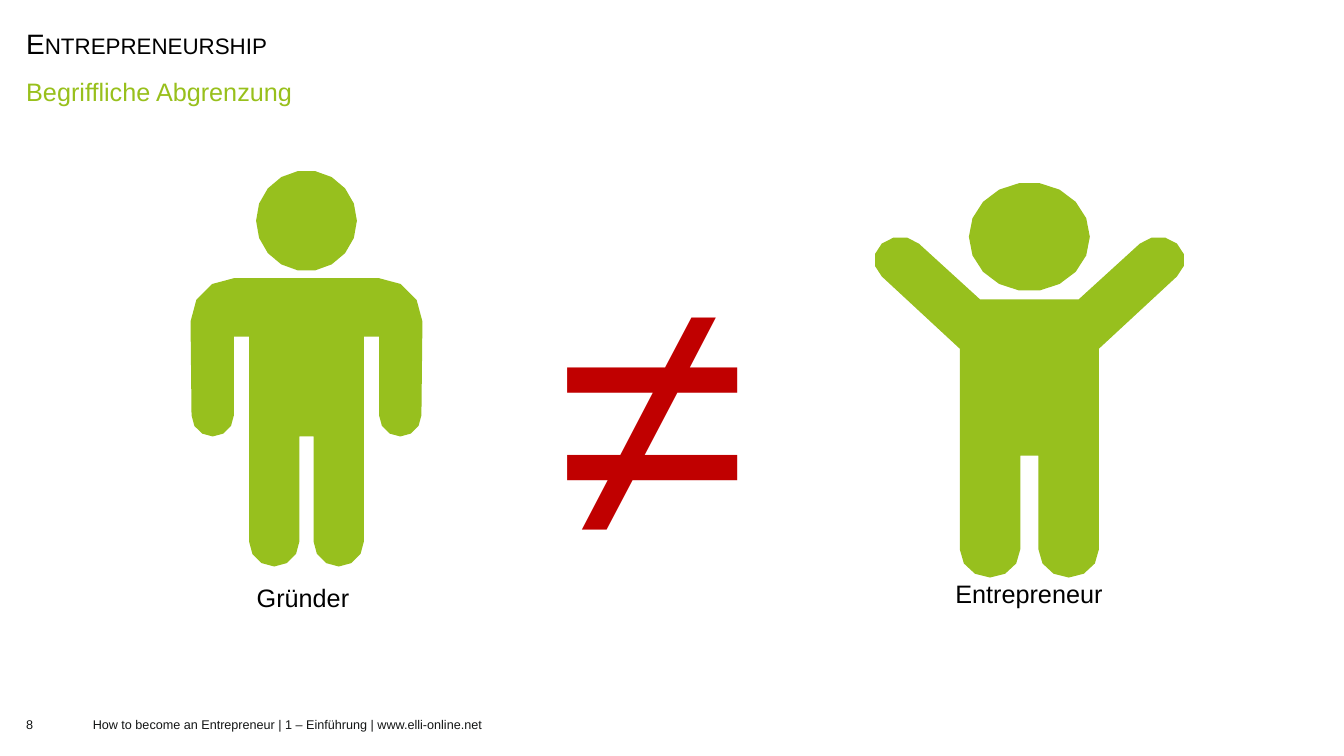
import math

from pptx import Presentation
from pptx import util as u
from pptx.dml.color import RGBColor
from pptx.enum import text
from pptx.oxml.ns import qn

COLORS = {"black": "000000", "footer": "141616", "heading": "98C01C",
          "figure": "97C01E", "unequal": "C00000"}

prs = Presentation()
prs.slide_width, prs.slide_height = u.Inches(13.33), u.Inches(7.5)
s = prs.slides.add_slide(prs.slide_layouts[1])


def put_text(words, box, size=18, color="black", align=text.PP_ALIGN.LEFT,
             anchor=text.MSO_ANCHOR.TOP, inset=None, spacing=None,
             small_caps=False, holder=None):
    """Write one line into a placeholder or a new text box."""
    box = [u.Inches(v) for v in box]
    sp = holder or s.shapes.add_textbox(*box)
    sp.left, sp.top, sp.width, sp.height = box
    tf = sp.text_frame
    tf.word_wrap = True
    tf.auto_size = text.MSO_AUTO_SIZE.NONE
    tf.vertical_anchor = anchor
    if inset is not None:
        tf.margin_left = tf.margin_right = u.Inches(inset)
        tf.margin_top = tf.margin_bottom = u.Inches(inset)
    p = tf.paragraphs[0]
    p.alignment = align
    p.space_before = u.Pt(0)
    if spacing:
        p.line_spacing = spacing
    if holder:
        pPr = p._p.get_or_add_pPr()
        pPr.set("marL", "0")
        pPr.set("indent", "0")
        pPr.append(pPr.makeelement(qn("a:buNone"), {}))
    r = p.add_run()
    r.text = words
    r.font.name, r.font.size = "Arial", u.Pt(size)
    r.font.color.rgb = RGBColor.from_string(COLORS[color])
    if small_caps:
        r.font._element.set("cap", "small")


def trace(parts, step):
    """Turn points (x, y) and arcs (cx, cy, rx, ry, from, to) into points."""
    points = []
    for x, y, *arc in parts:
        if not arc:
            points.append((x, y))
            continue
        rx, ry, start, end = arc
        for degrees in range(start, end + 1, step):
            a = math.radians(degrees)
            points.append((x + rx * math.cos(a), y + ry * math.sin(a)))
    return points


# Title and subtitle
put_text("Entrepreneurship", (0.16, 0.22, 9.37, 0.39), size=20, spacing=1.1,
         anchor=text.MSO_ANCHOR.MIDDLE, small_caps=True, holder=s.shapes.title)
put_text("Begriffliche Abgrenzung", (0.16, 0.68, 13.02, 0.39), color="heading",
         spacing=1.1, holder=s.placeholders[1])

# Figures: axis, head, and right half of the body measured from the axis
figures = [
    (3.04, (0, 2.19, 0.5, 0.5, 0, 340), [
        (0.72, 3.19, 0.43, 0.43, -90, 0),       # shoulder
        (0.93, 4.12, 0.21, 0.21, 0, 180),       # hand
        (0.72, 3.34), (0.57, 3.34),
        (0.32, 5.37, 0.25, 0.25, 0, 180),       # foot
        (0.07, 4.33)]),
    (10.21, (0, 2.35, 0.6, 0.54, 0, 340), [
        (0.49, 2.97),
        (1.28, 2.58, 0.26, 0.23, -135, 45),     # raised hand
        (0.69, 3.46),
        (0.39, 5.45, 0.3, 0.28, 0, 180),        # foot
        (0.09, 4.52)]),
]
for axis, head, half in figures:
    right = trace(half, step=30)
    body = right + [(-x, y) for x, y in reversed(right)]
    outlines = [[(u.Inches(axis + x), u.Inches(y)) for x, y in points]
                for points in (body, trace([head], step=20))]
    builder = s.shapes.build_freeform(*outlines[0][0])
    builder.add_line_segments(outlines[0][1:])
    builder.move_to(*outlines[1][0])
    builder.add_line_segments(outlines[1][1:])
    sp = builder.convert_to_shape()
    sp.shadow.inherit = False
    sp.fill.solid()
    sp.fill.fore_color.rgb = RGBColor.from_string(COLORS["figure"])
    sp.line.fill.background()

# Captions and the unequal sign
for words, box, size, color in [
        ("Gründer", (2.22, 5.73, 1.57, 0.4), 18, "black"),
        ("Entrepreneur", (9.3, 5.69, 1.81, 0.4), 18, "black"),
        ("≠", (5.41, 1.83, 2.13, 4.31), 250, "unequal")]:
    put_text(words, box, size, color, align=text.PP_ALIGN.CENTER)

# Footer
for words, box in [
        ("8", (0.26, 7, 0.5, 0.37)),
        ("How to become an Entrepreneur | 1 – Einführung | www.elli-online.net",
         (0.92, 7, 5.35, 0.37))]:
    put_text(words, box, 9, "footer", anchor=text.MSO_ANCHOR.MIDDLE, inset=0)

prs.save("out.pptx")
